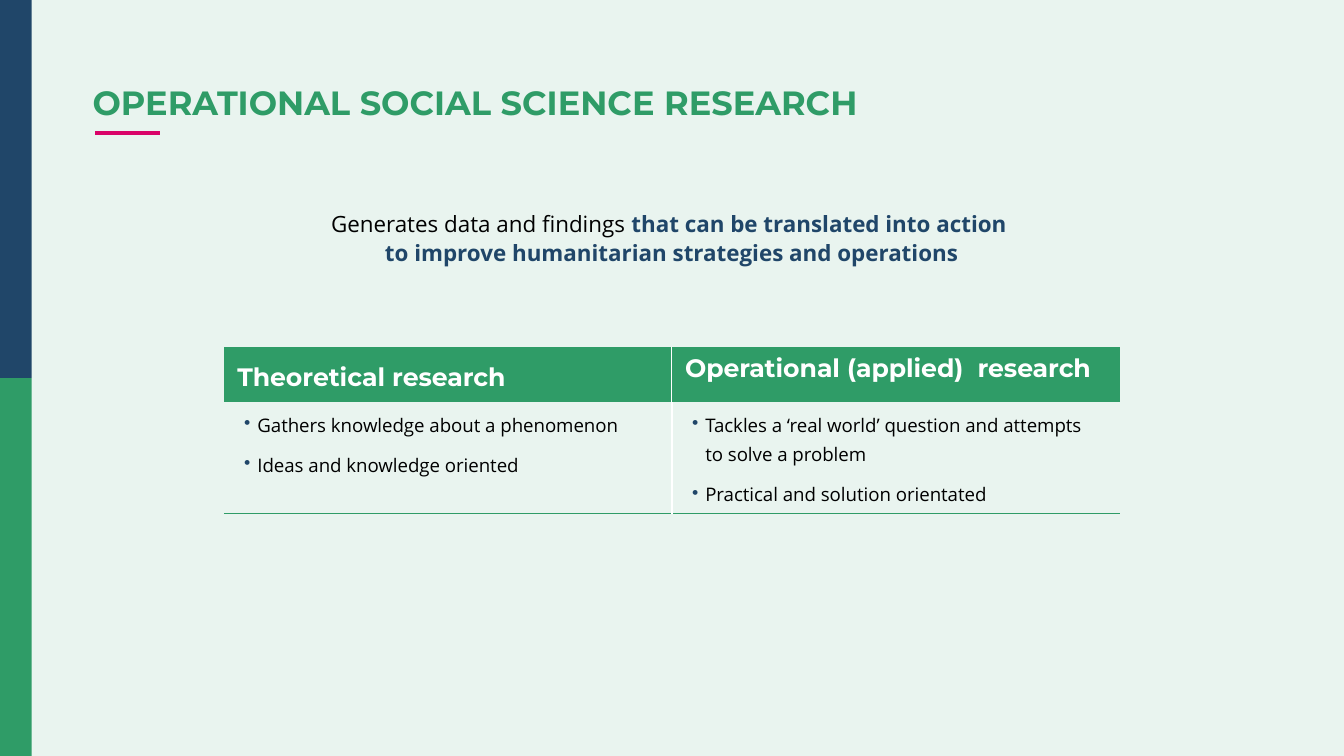
from dataclasses import dataclass

from lxml.etree import SubElement
from pptx import Presentation
from pptx.dml.color import RGBColor
from pptx.enum.shapes import MSO_CONNECTOR, MSO_SHAPE
from pptx.enum.text import MSO_ANCHOR, MSO_AUTO_SIZE, PP_ALIGN
from pptx.oxml import parse_xml
from pptx.oxml.ns import nsdecls, qn
from pptx.util import Cm, Pt

GREEN, NAVY, PINK, WHITE, BLACK = "2F9C67", "204669", "D90368", "FFFFFF", "000000"
NO_TABLE_STYLE = "{2D5ABB26-0587-4C30-8999-92F81FD0307C}"
SLIDE_WIDTH, SLIDE_HEIGHT = 25.4, 14.29
TEXT_LEFT, TEXT_WIDTH = 1.75, 21.9

HEADING = {"name": "Montserrat", "size": Pt(18), "bold": True}
COLUMN_HEADING = {**HEADING, "size": Pt(13.5)}
LEAD = {"name": "Open Sans", "size": Pt(12), "bold": False}
STRONG_LEAD = {**LEAD, "bold": True}
BODY = {**LEAD, "size": Pt(10)}


@dataclass
class TextPart:
    text: str
    style: dict
    colour: str


@dataclass
class SideBar:
    top: float
    colour: str


@dataclass
class Column:
    heading: list[TextPart]
    bullets: list[str]
    inner_side: str


SIDE_BARS = [SideBar(0, NAVY), SideBar(SLIDE_HEIGHT / 2, GREEN)]
COLUMNS = [
    Column(
        [TextPart("Theoretical research", COLUMN_HEADING, WHITE), TextPart(" ", HEADING, WHITE)],
        ["Gathers knowledge about a phenomenon", "Ideas and knowledge oriented"],
        "R",
    ),
    Column(
        [TextPart("Operational (applied)  research", COLUMN_HEADING, WHITE)],
        [
            "Tackles a ‘real world’ question and attempts \nto solve a problem",
            "Practical and solution orientated",
        ],
        "L",
    ),
]


def colour_of(value: str) -> RGBColor:
    return RGBColor.from_string(value)


def set_attributes(target, values: dict) -> None:
    for name, value in values.items():
        setattr(target, name, value)


def write_parts(paragraph, parts: list[TextPart]) -> None:
    for part in parts:
        for index, line in enumerate(part.text.split("\n")):
            if index:
                paragraph.add_line_break()
            run = paragraph.add_run()
            run.text = line
            set_attributes(run.font, part.style)
            run.font.color.rgb = colour_of(part.colour)


def paint_background(slide) -> None:
    fill = slide.background.fill
    fill.solid()
    fill.fore_color.rgb = colour_of(GREEN)
    for colour in slide.element.iter(qn("a:srgbClr")):
        SubElement(colour, qn("a:alpha"), val="10000")


def draw_side_bar(slide, bar: SideBar) -> None:
    shape = slide.shapes.add_shape(
        MSO_SHAPE.RECTANGLE, 0, Cm(bar.top), Cm(0.6), Cm(SLIDE_HEIGHT / 2)
    )
    shape.shadow.inherit = False
    shape.fill.solid()
    shape.fill.fore_color.rgb = colour_of(bar.colour)
    shape.line.fill.background()


def draw_title(slide) -> None:
    title = slide.shapes.title
    set_attributes(title, {
        "left": Cm(TEXT_LEFT), "top": Cm(1.5), "width": Cm(TEXT_WIDTH), "height": Cm(0.94),
    })
    set_attributes(title.text_frame, {
        "margin_left": 0, "word_wrap": True, "auto_size": MSO_AUTO_SIZE.NONE,
        "vertical_anchor": MSO_ANCHOR.MIDDLE,
    })
    paragraph = title.text_frame.paragraphs[0]
    set_attributes(paragraph, {"alignment": PP_ALIGN.LEFT, "line_spacing": 0.9})
    write_parts(paragraph, [TextPart("OPERATIONAL SOCIAL SCIENCE RESEARCH", HEADING, GREEN)])

    underline = slide.shapes.add_connector(
        MSO_CONNECTOR.STRAIGHT, Cm(1.8), Cm(2.51), Cm(3.03), Cm(2.51)
    )
    underline.line.color.rgb = colour_of(PINK)
    underline.line.width = Pt(2.25)
    SubElement(underline.element.spPr, qn("a:effectLst"))


def draw_lead(slide) -> None:
    text_box = slide.shapes.add_textbox(Cm(TEXT_LEFT), Cm(3.81), Cm(TEXT_WIDTH), Cm(9.07))
    text_box.text_frame.word_wrap = True
    paragraph = text_box.text_frame.paragraphs[0]
    set_attributes(paragraph, {"alignment": PP_ALIGN.CENTER, "line_spacing": Pt(15.4)})
    write_parts(paragraph, [
        TextPart("Generates data and findings ", LEAD, BLACK),
        TextPart(
            "that can be translated into action \n"
            "to improve humanitarian strategies and operations",
            STRONG_LEAD, NAVY,
        ),
    ])


def add_borders(cell, borders: dict[str, tuple[str, float]]) -> None:
    properties = cell._tc.get_or_add_tcPr()
    for index, (side, (colour, width)) in enumerate(borders.items()):
        properties.insert(index, parse_xml(
            f'<a:ln{side} {nsdecls("a")} w="{Pt(width)}"><a:solidFill>'
            f'<a:srgbClr val="{colour}"/></a:solidFill></a:ln{side}>'
        ))


def format_bullet(paragraph) -> None:
    properties = paragraph._p.get_or_add_pPr()
    properties.set("marL", str(Cm(0.38)))
    properties.set("indent", str(Cm(-0.25)))
    bullet_colour = SubElement(properties, qn("a:buClr"))
    SubElement(bullet_colour, qn("a:srgbClr"), val=NAVY)
    SubElement(properties, qn("a:buChar"), char="•")
    set_attributes(paragraph, {"line_spacing": 1.15, "space_after": Pt(6)})


def fill_column(table, index: int, column: Column) -> None:
    heading_cell, body_cell = table.cell(0, index), table.cell(1, index)
    heading_cell.fill.solid()
    heading_cell.fill.fore_color.rgb = colour_of(GREEN)
    write_parts(heading_cell.text_frame.paragraphs[0], column.heading)
    add_borders(heading_cell, {column.inner_side: (WHITE, 0.75)})

    body_cell.fill.background()
    frame = body_cell.text_frame
    for position, text in enumerate(column.bullets):
        paragraph = frame.add_paragraph() if position else frame.paragraphs[0]
        format_bullet(paragraph)
        write_parts(paragraph, [TextPart(text, BODY, BLACK)])
    add_borders(body_cell, {column.inner_side: (WHITE, 1), "B": (GREEN, 1)})


def draw_table(slide) -> None:
    table = slide.shapes.add_table(
        2, len(COLUMNS), Cm(4.23), Cm(6.56), Cm(16.93), Cm(3.15)
    ).table
    set_attributes(table, {"first_row": False, "horz_banding": False})
    table._tbl.tblPr.find(qn("a:tableStyleId")).text = NO_TABLE_STYLE
    for row, height in zip(table.rows, (1.04, 2.11)):
        row.height = Cm(height)
    for index, column in enumerate(COLUMNS):
        fill_column(table, index, column)


def main() -> None:
    presentation = Presentation()
    presentation.slide_width, presentation.slide_height = Cm(SLIDE_WIDTH), Cm(SLIDE_HEIGHT)
    slide = presentation.slides.add_slide(presentation.slide_layouts[5])
    paint_background(slide)
    draw_title(slide)
    draw_lead(slide)
    for bar in SIDE_BARS:
        draw_side_bar(slide, bar)
    draw_table(slide)
    presentation.save("out.pptx")


if __name__ == "__main__":
    main()
